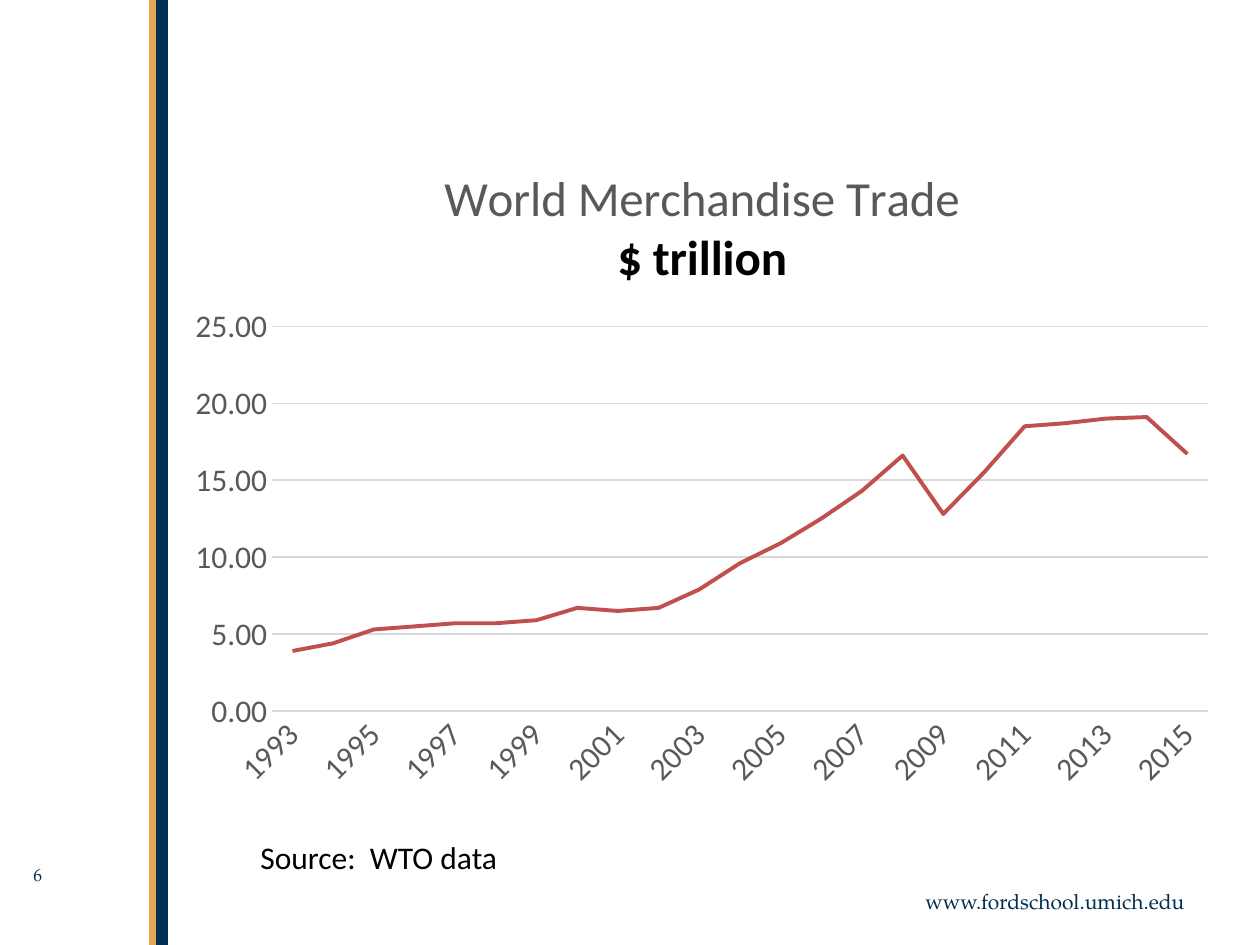
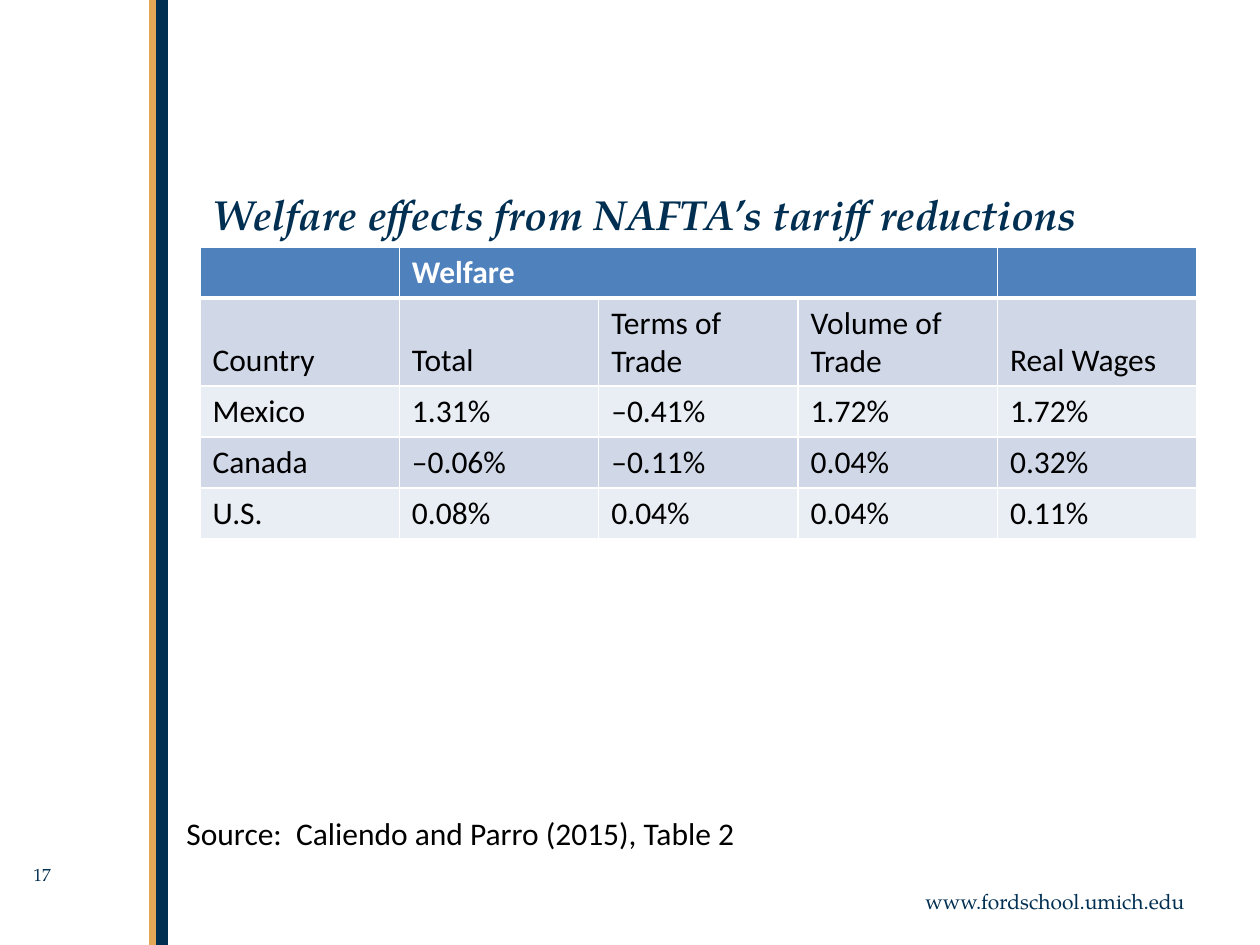
"""Build two slides on world trade growth and the welfare effects of NAFTA."""
import pptx
import pptx.chart.data
import pptx.dml.color
import pptx.enum.chart
import pptx.enum.shapes
import pptx.enum.text
import pptx.oxml
import pptx.oxml.ns
import pptx.util

RGB = pptx.dml.color.RGBColor
NAVY = RGB(0x00, 0x2F, 0x52)
GOLD = RGB(0xE3, 0xA8, 0x56)
BLACK = RGB(0x00, 0x00, 0x00)
WHITE = RGB(0xFF, 0xFF, 0xFF)
GRAY = RGB(0x59, 0x59, 0x59)
RULE = RGB(0xD9, 0xD9, 0xD9)
RED = RGB(0xC0, 0x50, 0x4D)
BLUE = RGB(0x4F, 0x81, 0xBD)
BANDS = [RGB(0xE9, 0xED, 0xF4), RGB(0xD0, 0xD8, 0xE8)]
SANS = "Calibri"
SERIF = "TeX Gyre Pagella"
SCALE = 914400 / 126
ALIGN = pptx.enum.text.PP_ALIGN
ANCHOR = pptx.enum.text.MSO_ANCHOR


def px(*sizes):
    return [pptx.util.Emu(round(size * SCALE)) for size in sizes]


def style(font, size, color, face=SANS, bold=False):
    font.size = pptx.util.Pt(size)
    font.color.rgb = color
    font.name = face
    font.bold = bold


deck = pptx.Presentation()
deck.slide_width, deck.slide_height = px(1260, 945)
labels = [
    [("6", 21, 858, 116, 43, 10, NAVY, SERIF),
     ("Source:  WTO data", 248, 832, 350, 50, 18, BLACK, SANS)],
    [("17", 21, 858, 116, 43, 10, NAVY, SERIF),
     ("Source:  Caliendo and Parro (2015), Table 2", 174, 808, 725, 50, 18, BLACK, SANS),
     ("Welfare effects from NAFTA’s tariff reductions", 200, 181, 998, 66, 24, NAVY, SERIF)],
]
footer = ("www.fordschool.umich.edu", 882, 882, 315, 38, 12, NAVY, SERIF)

for texts in labels:
    slide = deck.slides.add_slide(deck.slide_layouts[6])
    for left, width, color in [(155, 13, NAVY), (149, 7, GOLD)]:
        band = slide.shapes.add_shape(
            pptx.enum.shapes.MSO_SHAPE.RECTANGLE, *px(left, 0, width, 945))
        band.shadow.inherit = False
        band.fill.solid()
        band.fill.fore_color.rgb = color
        band.line.fill.background()
    for text, left, top, width, height, size, color, face in [footer] + texts:
        box = slide.shapes.add_textbox(*px(left, top, width, height))
        box.text_frame.word_wrap = True
        line = box.text_frame.paragraphs[0]
        line.text = text
        style(line.font, size, color, face, bold=size == 24)
        if size == 24:
            line.font.italic = True
            box.text_frame.vertical_anchor = ANCHOR.MIDDLE
        if size == 12:
            line.alignment = ALIGN.RIGHT

trade, welfare = deck.slides

data = pptx.chart.data.CategoryChartData()
data.categories = range(1993, 2016)
data.add_series("Series 1", [
    3.9, 4.4, 5.3, 5.5, 5.7, 5.7, 5.9, 6.7, 6.5, 6.7, 7.9, 9.6,
    10.9, 12.5, 14.3, 16.6, 12.8, 15.5, 18.5, 18.7, 19, 19.1, 16.7])
chart = trade.shapes.add_chart(
    pptx.enum.chart.XL_CHART_TYPE.LINE, *px(174, 144, 1056, 658), data).chart
chart.has_legend = False
style(chart.font, 10, BLACK)
chart.has_title = True
title = chart.chart_title.text_frame
title.text = "World Merchandise Trade\n$ trillion"
for line, color, bold in zip(title.paragraphs, [GRAY, BLACK], [False, True]):
    style(line.font, 28, color, bold=bold)

years, values = chart.category_axis, chart.value_axis
for axis in (years, values):
    style(axis.tick_labels.font, 18, GRAY)
    axis.major_tick_mark = pptx.enum.chart.XL_TICK_MARK.NONE
    axis.minor_tick_mark = pptx.enum.chart.XL_TICK_MARK.NONE
years.has_major_gridlines = False
body = years._element.find(".//" + pptx.oxml.ns.qn("a:bodyPr"))
body.set("rot", "-2700000")
values.minimum_scale, values.maximum_scale, values.major_unit = 0, 25, 5
values.tick_labels.number_format = "0.00"
values.tick_labels.number_format_is_linked = False
values.format.line.fill.background()
for rule in (years.format.line, values.major_gridlines.format.line):
    rule.color.rgb = RULE
    rule.width = pptx.util.Pt(0.75)
plot = chart.plots[0]
plot.vary_by_categories = False
curve = plot.series[0]
curve.smooth = False
curve.marker.style = pptx.enum.chart.XL_MARKER_STYLE.NONE
curve.format.line.color.rgb = RED
curve.format.line.width = pptx.util.Pt(2.25)

area = chart._chartSpace.chart.plotArea
for old in area.findall(pptx.oxml.ns.qn("c:layout")):
    area.remove(old)
area.insert(0, pptx.oxml.parse_xml(
    f'<c:layout {pptx.oxml.ns.nsdecls("c")}><c:manualLayout>'
    '<c:layoutTarget val="inner"/><c:xMode val="edge"/><c:yMode val="edge"/>'
    f'<c:x val="{98 / 1056:.3f}"/><c:y val="{182 / 658:.3f}"/>'
    f'<c:w val="{936 / 1056:.3f}"/><c:h val="{385 / 658:.3f}"/>'
    '</c:manualLayout></c:layout>'))

rows = [
    ["", "Welfare", "", "", ""],
    ["Country", "Total", "Terms of Trade", "Volume of Trade", "Real Wages"],
    ["Mexico", "1.31%", "–0.41%", "1.72%", "1.72%"],
    ["Canada", "–0.06%", "–0.11%", "0.04%", "0.32%"],
    ["U.S.", "0.08%", "0.04%", "0.04%", "0.11%"],
]
heights = [51, 88, 51, 51, 51]
table = welfare.shapes.add_table(5, 5, *px(200, 247, 997, sum(heights))).table
for row, height in zip(table.rows, px(*heights)):
    row.height = height
for col, width in zip(table.columns, px(*[199.4] * 5)):
    col.width = width
table.cell(0, 1).merge(table.cell(0, 3))
for r, row in enumerate(rows):
    for c, text in enumerate(row):
        cell = table.cell(r, c)
        cell.text = text
        head = r == 0
        style(cell.text_frame.paragraphs[0].font, 18, WHITE if head else BLACK, bold=head)
        cell.vertical_anchor = ANCHOR.BOTTOM if r == 1 else ANCHOR.TOP
        cell.fill.solid()
        cell.fill.fore_color.rgb = BLUE if head else BANDS[r % 2]
        for spot, side in enumerate("LRTB"):
            thick = (head and side == "B") or (r == 1 and side == "T")
            cell._tc.get_or_add_tcPr().insert(spot, pptx.oxml.parse_xml(
                f'<a:ln{side} {pptx.oxml.ns.nsdecls("a")} w="{38100 if thick else 12700}">'
                f'<a:solidFill><a:srgbClr val="{WHITE}"/></a:solidFill></a:ln{side}>'))

deck.save("out.pptx")
